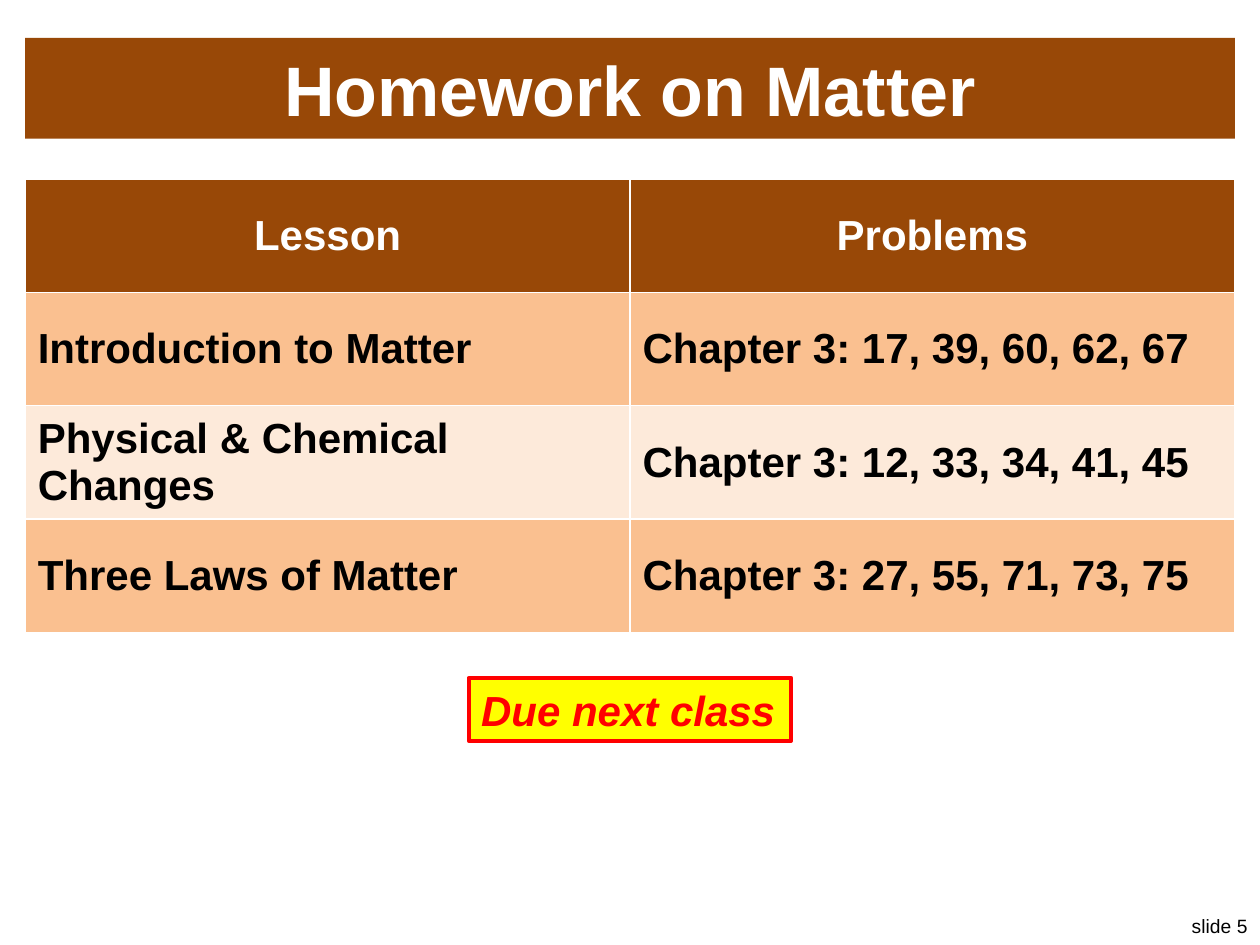
from pptx import Presentation
from pptx import util as u
from pptx.dml import color
from pptx.enum import shapes, text

PX = 9144  # EMU per px, 100 px to the inch
BROWN, PEACH, CREAM = "984807", "FAC090", "FDEADA"
WHITE, BLACK, RED, YELLOW = "FFFFFF", "000000", "FF0000", "FFFF00"
MID = text.MSO_ANCHOR.MIDDLE
LEFT, CENTER, RIGHT = text.PP_ALIGN.LEFT, text.PP_ALIGN.CENTER, text.PP_ALIGN.RIGHT


def rgb(tone):
    return color.RGBColor.from_string(tone)


def write(frame, words, size=24, tone=BLACK, bold=True, slant=False,
          align=LEFT, wrap=True):
    frame.word_wrap = wrap
    par = frame.paragraphs[0]
    par.alignment = align
    run = par.add_run()
    run.text = words
    font = run.font
    font.name, font.size = "Arial", u.Pt(size)
    font.bold, font.italic = bold, slant
    font.color.rgb = rgb(tone)


deck = Presentation()
deck.slide_width, deck.slide_height = 1000 * PX, 750 * PX
slide = deck.slides.add_slide(deck.slide_layouts[5])

# Title bar
title = slide.shapes.title
title.left, title.top, title.width, title.height = 20 * PX, 30 * PX, 960 * PX, 80 * PX
title.fill.solid()
title.fill.fore_color.rgb = rgb(BROWN)
title.text_frame.vertical_anchor = MID
write(title.text_frame, "Homework on Matter", size=40, tone=WHITE, align=CENTER)

# Homework table: the default style draws the white rules
rows = [
    ("Lesson", "Problems"),
    ("Introduction to Matter", "Chapter 3: 17, 39, 60, 62, 67"),
    ("Physical & Chemical Changes", "Chapter 3: 12, 33, 34, 41, 45"),
    ("Three Laws of Matter", "Chapter 3: 27, 55, 71, 73, 75"),
]
table = slide.shapes.add_table(len(rows), 2, 20 * PX, 142 * PX, 960 * PX, 360 * PX).table
for r, row in enumerate(rows):
    head = r == 0
    fill = BROWN if head else PEACH if r % 2 else CREAM
    for c, words in enumerate(row):
        cell = table.cell(r, c)
        cell.fill.solid()
        cell.fill.fore_color.rgb = rgb(fill)
        cell.vertical_anchor = MID
        write(cell.text_frame, words, tone=WHITE if head else BLACK,
              align=CENTER if head else LEFT)

# Due date
due = slide.shapes.add_shape(shapes.MSO_SHAPE.RECTANGLE,
                             372 * PX, 538 * PX, 256 * PX, 50 * PX)
due.shadow.inherit = False
due.fill.solid()
due.fill.fore_color.rgb = rgb(YELLOW)
due.line.color.rgb = rgb(RED)
due.line.width = u.Pt(2.25)
write(due.text_frame, "Due next class", tone=RED, slant=True, wrap=False)

# Slide number
num = slide.shapes.add_textbox(925 * PX, 721 * PX, 75 * PX, 29 * PX)
write(num.text_frame, "slide 5", size=11, bold=False, align=RIGHT, wrap=False)

deck.save("out.pptx")
